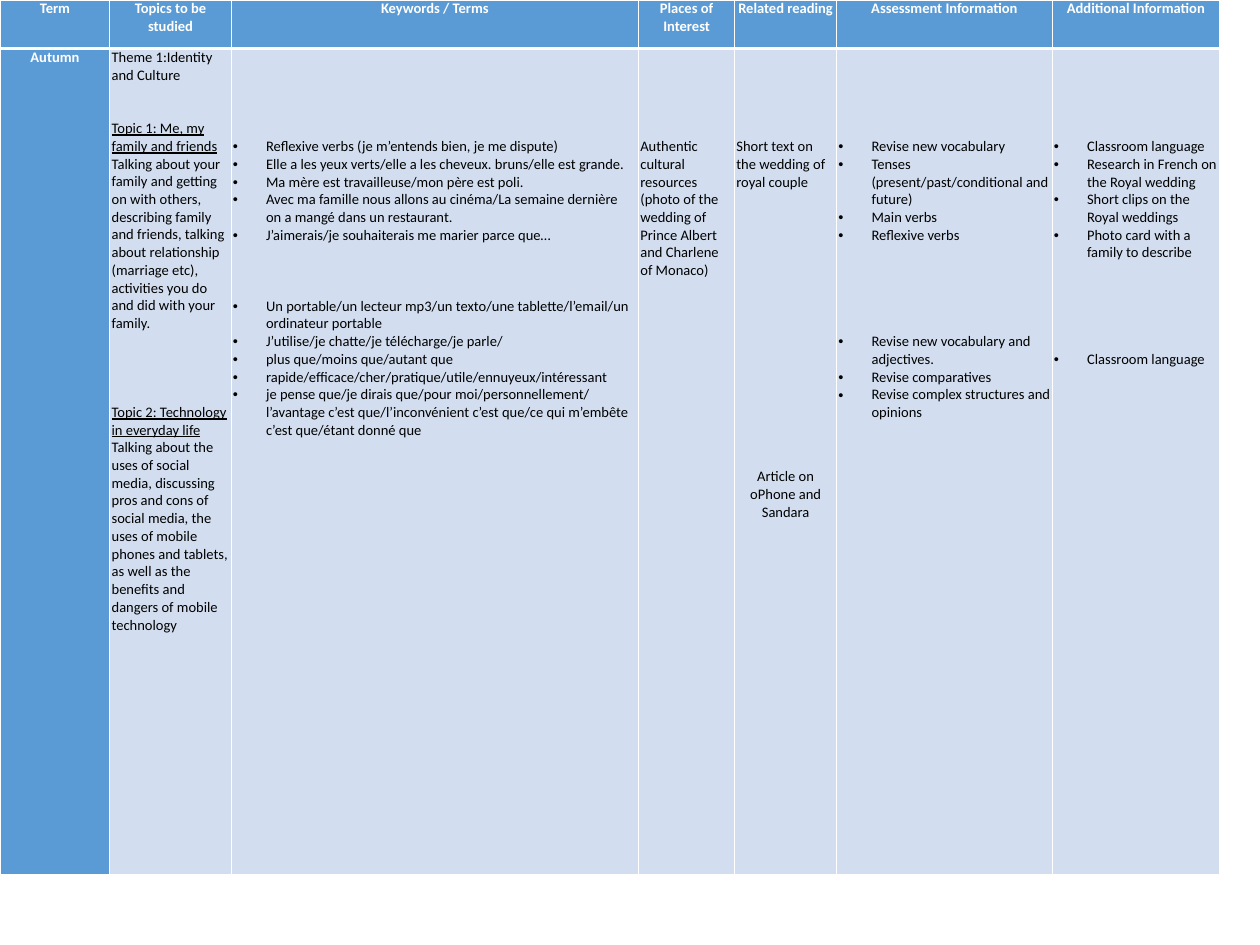
"""Build a one-slide French curriculum plan for the autumn term."""
import collections

import lxml.etree
import pptx
import pptx.dml.color
import pptx.enum.text
import pptx.oxml.ns
import pptx.util

EMU_PER_PX = 9144
LINE_POINTS = 14.65
WHITE, BLACK, BLUE, PALE_BLUE = "FFFFFF", "000000", "5B9BD5", "D2DEEF"
COLUMN_WIDTHS = [126, 139, 467, 110, 117, 247, 192]
ROW_HEIGHTS = [56, 946]
SIDE_MARGIN, FIRST_GAP, BULLET_INDENT = 2, 102, 38

CENTER = pptx.enum.text.PP_ALIGN.CENTER
Entry = collections.namedtuple("Entry", "text style gap", defaults=("plain", 0))
STYLES = {
    "plain": {"size": pptx.util.Pt(12), "name": "Calibri", "bold": False, "underline": False},
    "heading": {"size": pptx.util.Pt(12), "name": "Calibri", "bold": True, "underline": False},
    "topic": {"size": pptx.util.Pt(12), "name": "Calibri", "bold": False, "underline": True},
}

HEADINGS = [
    "Term", "Topics to be studied", "Keywords / Terms", "Places of Interest",
    "Related reading", "Assessment Information", "Additional Information",
]
TOPICS = [
    Entry("Theme 1:Identity and Culture"),
    Entry("Topic 1: Me, my family and friends", "topic", 2),
    Entry("Talking about your family and getting on with others, describing family and "
          "friends, talking about relationship (marriage etc), activities you do and did "
          "with your family."),
    Entry("Topic 2: Technology in everyday life", "topic", 4),
    Entry("Talking about the uses of social media, discussing pros and cons of social "
          "media, the uses of mobile phones and tablets, as well as the benefits and "
          "dangers of mobile technology"),
]
PLACES = [Entry("Authentic cultural resources (photo of the wedding of Prince Albert and "
                "Charlene of Monaco)")]
READING = [
    Entry("Short text on the wedding of royal couple"),
    Entry("Article on oPhone and Sandara", "centered", 15.6),
]


def px(length):
    """Turn px into EMU."""
    return pptx.util.Emu(length * EMU_PER_PX)


def color(hex_value):
    """Turn a hex string into a colour."""
    return pptx.dml.color.RGBColor.from_string(hex_value)


def apply_format(target, values):
    """Set each named attribute on the target."""
    for name, value in values.items():
        setattr(target, name, value)


def bullets(texts, gap=0):
    """Make a bulleted group with a gap, in lines, above it."""
    return [Entry(text, "bullet", 0 if index else gap) for index, text in enumerate(texts)]


def add_child(parent, tag, **attributes):
    """Append an XML element with attributes."""
    return lxml.etree.SubElement(parent, pptx.oxml.ns.qn(tag), attributes)


def set_borders(cell, top, bottom):
    """Draw white borders with widths in points."""
    properties = cell._tc.get_or_add_tcPr()
    for tag, points in {"a:lnL": 1, "a:lnR": 1, "a:lnT": top, "a:lnB": bottom}.items():
        line = add_child(properties, tag, w=str(pptx.util.Pt(points)))
        add_child(add_child(line, "a:solidFill"), "a:srgbClr", val=WHITE)


def set_bullet(paragraph):
    """Give a paragraph a hanging round bullet."""
    properties = paragraph._p.get_or_add_pPr()
    properties.set("marL", str(px(BULLET_INDENT)))
    properties.set("indent", str(-px(BULLET_INDENT)))
    add_child(properties, "a:buFont", typeface="Arial")
    add_child(properties, "a:buChar", char="•")


def write_entry(paragraph, entry, text_color):
    """Write one styled entry into a paragraph."""
    run = paragraph.add_run()
    run.text = entry.text
    apply_format(run.font, STYLES.get(entry.style, STYLES["plain"]))
    run.font.color.rgb = color(text_color)
    if entry.gap:
        paragraph.space_before = pptx.util.Pt(entry.gap * LINE_POINTS)
    if entry.style in ("heading", "centered"):
        paragraph.alignment = CENTER
    if entry.style == "bullet":
        set_bullet(paragraph)


def fill_cell(cell, entries, fill, text_color, top_margin=0, borders=(3, 1)):
    """Format a table cell and write its entries."""
    apply_format(cell, {
        "margin_left": px(SIDE_MARGIN), "margin_right": px(SIDE_MARGIN),
        "margin_top": px(top_margin), "margin_bottom": 0,
    })
    set_borders(cell, *borders)
    cell.fill.solid()
    cell.fill.fore_color.rgb = color(fill)
    frame = cell.text_frame
    for index, entry in enumerate(entries):
        paragraph = frame.add_paragraph() if index else frame.paragraphs[0]
        write_entry(paragraph, entry, text_color)


def add_plan_table(slide):
    """Add the empty table with its column and row sizes."""
    table = slide.shapes.add_table(
        len(ROW_HEIGHTS), len(COLUMN_WIDTHS), 0, 0,
        px(sum(COLUMN_WIDTHS)), px(sum(ROW_HEIGHTS))).table
    for column, width in zip(table.columns, COLUMN_WIDTHS):
        column.width = px(width)
    for row, height in zip(table.rows, ROW_HEIGHTS):
        row.height = px(height)
    return table


def main():
    """Build and save the presentation."""
    presentation = pptx.Presentation()
    apply_format(presentation, {"slide_width": px(1444), "slide_height": px(1083)})
    slide = presentation.slides.add_slide(presentation.slide_layouts[6])
    table = add_plan_table(slide)

    for column, heading in enumerate(HEADINGS):
        fill_cell(table.cell(0, column), [Entry(heading, "heading")], BLUE, WHITE,
                  borders=(1, 3))

    keywords = bullets([
        "Reflexive verbs (je m’entends bien, je me dispute)",
        "Elle a les yeux verts/elle a les cheveux. bruns/elle est grande.",
        "Ma mère est travailleuse/mon père est poli.",
        "Avec ma famille nous allons au cinéma/La semaine dernière on a mangé dans un "
        "restaurant.",
        "J’aimerais/je souhaiterais me marier parce que…",
    ]) + bullets([
        "Un portable/un lecteur mp3/un texto/une tablette/l’email/un ordinateur portable",
        "J’utilise/je chatte/je télécharge/je parle/",
        "plus que/moins que/autant que",
        "rapide/efficace/cher/pratique/utile/ennuyeux/intéressant",
        "je pense que/je dirais que/pour moi/personnellement/ l’avantage c’est "
        "que/l’inconvénient c’est que/ce qui m’embête c’est que/étant donné que",
    ], gap=3)
    assessment = bullets([
        "Revise new vocabulary",
        "Tenses (present/past/conditional and future)",
        "Main verbs",
        "Reflexive verbs",
    ]) + bullets([
        "Revise new vocabulary and adjectives.",
        "Revise comparatives",
        "Revise complex structures and opinions",
    ], gap=5)
    additional = bullets([
        "Classroom language",
        "Research in French on the Royal wedding",
        "Short clips on the Royal weddings",
        "Photo card with a family to describe",
    ]) + bullets(["Classroom language"], gap=5)

    fill_cell(table.cell(1, 0), [Entry("Autumn", "heading")], BLUE, WHITE)
    fill_cell(table.cell(1, 1), TOPICS, PALE_BLUE, BLACK)
    for column, entries in enumerate([keywords, PLACES, READING, assessment, additional], 2):
        fill_cell(table.cell(1, column), entries, PALE_BLUE, BLACK, FIRST_GAP)
    presentation.save("out.pptx")


if __name__ == "__main__":
    main()
